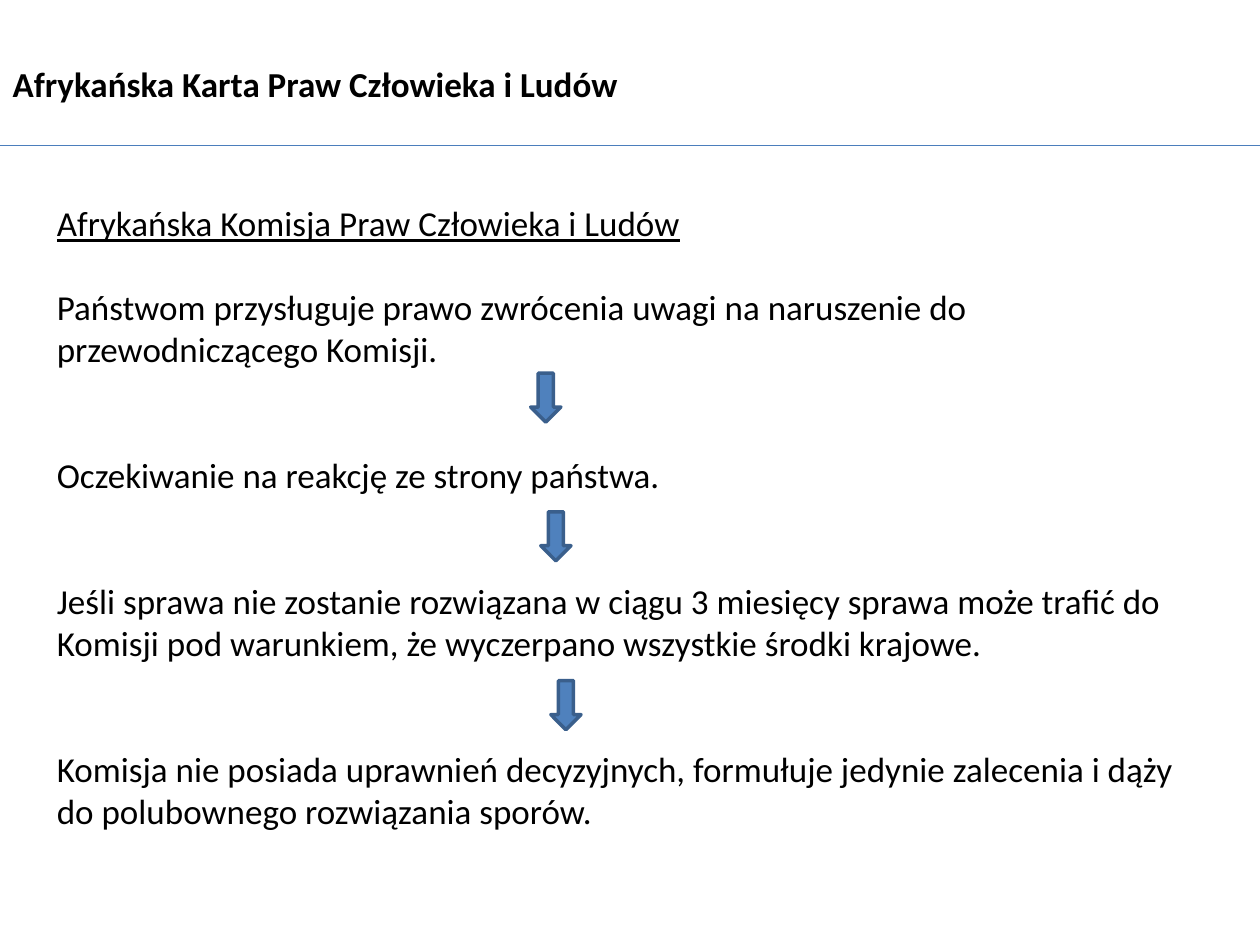
from lxml import etree
from pptx import Presentation
from pptx.dml.color import RGBColor
from pptx.enum.shapes import MSO_CONNECTOR, MSO_SHAPE
from pptx.enum.text import MSO_ANCHOR, MSO_AUTO_SIZE, PP_ALIGN
from pptx.oxml.ns import qn
from pptx.util import Pt

STRAIGHT = MSO_CONNECTOR.STRAIGHT
DOWN_ARROW = MSO_SHAPE.DOWN_ARROW
TOP, MIDDLE = MSO_ANCHOR.TOP, MSO_ANCHOR.MIDDLE
NO_AUTOFIT = MSO_AUTO_SIZE.NONE
LEFT = PP_ALIGN.LEFT

BLACK = RGBColor(0x00, 0x00, 0x00)
RULE_BLUE = RGBColor(0x4B, 0x7E, 0xBC)
ARROW_FILL = RGBColor(0x4F, 0x81, 0xBD)
ARROW_LINE = RGBColor(0x3A, 0x5F, 0x8C)

FONT = "Calibri"
TEXT_SIZE = 20
LINE_HEIGHT = 24
SLIDE_WIDTH, SLIDE_HEIGHT = 720, 540

TITLE = "Afrykańska Karta Praw Człowieka i Ludów"
HEADING = "Afrykańska Komisja Praw Człowieka i Ludów"
STEPS = [
    "Państwom przysługuje prawo zwrócenia uwagi na naruszenie do "
    "przewodniczącego Komisji.",
    "Oczekiwanie na reakcję ze strony państwa.",
    "Jeśli sprawa nie zostanie rozwiązana w ciągu 3 miesięcy sprawa może "
    "trafić do Komisji pod warunkiem, że wyczerpano wszystkie środki krajowe.",
    "Komisja nie posiada uprawnień decyzyjnych, formułuje jedynie zalecenia "
    "i dąży do polubownego rozwiązania sporów.",
]
# Offsets from the top left corner of the body box
ARROW_OFFSETS = [(278, 101.5), (283.75, 180.75), (289.5, 277.25)]
ARROW_WIDTH, ARROW_HEIGHT = 17.25, 28


def place_text(placeholder, box, lines, anchor):
    placeholder.left, placeholder.top, placeholder.width, placeholder.height = map(Pt, box)
    frame = placeholder.text_frame
    frame.text = "\n".join(lines)
    frame.word_wrap = True
    frame.auto_size = NO_AUTOFIT
    frame.vertical_anchor = anchor
    for paragraph in frame.paragraphs:
        paragraph.alignment = LEFT
        paragraph.space_before = Pt(0)
        for run in paragraph.runs:
            run.font.name = FONT
            run.font.size = Pt(TEXT_SIZE)
            run.font.color.rgb = BLACK
    return frame.paragraphs


def add_header(slide, box):
    """Place the title in the box and a full-width rule below it."""
    title, = place_text(slide.shapes.title, box, [TITLE], MIDDLE)
    title.runs[0].font.bold = True
    rule_top = Pt(box[1] + box[3] + 19.5)
    rule = slide.shapes.add_connector(STRAIGHT, 0, rule_top, Pt(SLIDE_WIDTH), rule_top)
    rule.line.color.rgb = RULE_BLUE
    rule.line.width = Pt(0.75)
    etree.SubElement(rule._element.spPr, qn("a:effectLst"))


def add_arrow(slide, left, top):
    arrow = slide.shapes.add_shape(
        DOWN_ARROW, Pt(left), Pt(top), Pt(ARROW_WIDTH), Pt(ARROW_HEIGHT))
    arrow.shadow.inherit = False
    arrow.fill.solid()
    arrow.fill.fore_color.rgb = ARROW_FILL
    arrow.line.color.rgb = ARROW_LINE
    arrow.line.width = Pt(2)


def add_procedure(slide, box):
    """Place the underlined heading and the steps, with an arrow between steps."""
    paragraphs = place_text(slide.placeholders[1], box, [HEADING, *STEPS], TOP)
    for paragraph in paragraphs:
        properties = paragraph._p.get_or_add_pPr()
        properties.set("marL", "0")
        properties.set("indent", "0")
        etree.SubElement(properties, qn("a:buNone"))
    heading, first_step, *later_steps = paragraphs
    heading.runs[0].font.underline = True
    first_step.space_before = Pt(LINE_HEIGHT)
    for step in later_steps:
        step.space_before = Pt(2 * LINE_HEIGHT)
    for left, top in ARROW_OFFSETS:
        add_arrow(slide, box[0] + left, box[1] + top)


def main():
    presentation = Presentation()
    presentation.slide_width = Pt(SLIDE_WIDTH)
    presentation.slide_height = Pt(SLIDE_HEIGHT)
    slide = presentation.slides.add_slide(presentation.slide_layouts[1])
    add_header(slide, (0, 32, 695, 31.5))
    add_procedure(slide, (25.25, 111.75, 669, 371))
    presentation.save("out.pptx")


if __name__ == "__main__":
    main()
